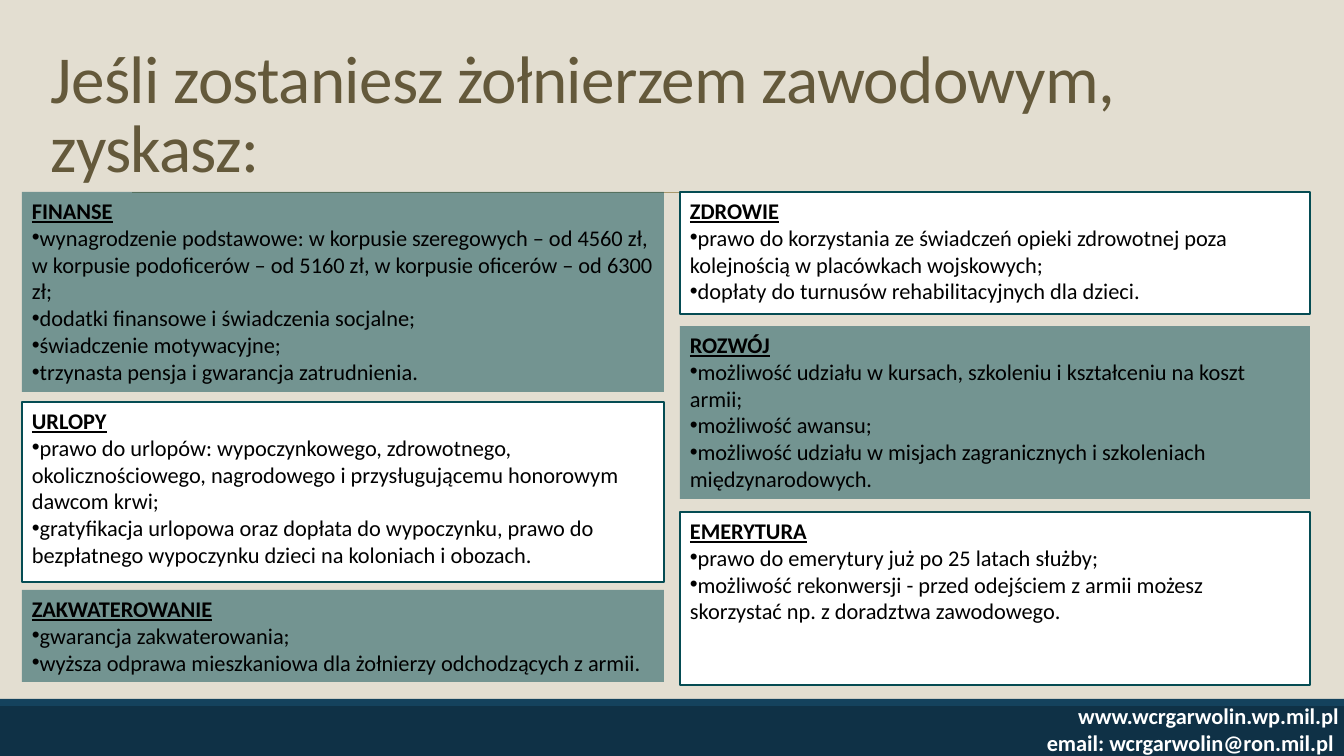
from dataclasses import dataclass

import lxml.etree
import pptx
import pptx.dml.color
import pptx.enum.shapes
import pptx.enum.text
import pptx.oxml.ns
import pptx.util

ALIGN = pptx.enum.text.PP_ALIGN
ANCHOR = pptx.enum.text.MSO_ANCHOR


@dataclass(frozen=True)
class Theme:
    font: str = "Calibri"
    background: str = "E3DED1"
    footer: str = "0F3146"
    stripe: str = "14425D"
    rule: str = "A8986C"
    title: str = "64593B"
    accent: str = "054C53"
    white: str = "FFFFFF"
    black: str = "000000"
    title_size: int = 48
    body_size: int = 16


def px(length):
    return pptx.util.Inches(length / 100.8)


def rgb(color):
    return pptx.dml.color.RGBColor.from_string(color)


def add_element(parent, tag, **attributes):
    return lxml.etree.SubElement(parent, pptx.oxml.ns.qn(tag), attributes)


class Page:
    def __init__(self, deck, theme):
        self.theme = theme
        self.slide = deck.slides.add_slide(deck.slide_layouts[6])
        fill = self.slide.background.fill
        fill.solid()
        fill.fore_color.rgb = rgb(theme.background)

    def rectangle(self, left, top, width, height, color, opacity=100, border=None):
        shape = self.slide.shapes.add_shape(
            pptx.enum.shapes.MSO_SHAPE.RECTANGLE, px(left), px(top), px(width), px(height))
        shape.shadow.inherit = False
        shape.fill.solid()
        shape.fill.fore_color.rgb = rgb(color)
        if opacity < 100:
            tint = shape.fill._xPr.find(".//" + pptx.oxml.ns.qn("a:srgbClr"))
            add_element(tint, "a:alpha", val=str(opacity * 1000))
        if border:
            shape.line.color.rgb = rgb(border)
            shape.line.width = pptx.util.Pt(1.25)
        else:
            shape.line.fill.background()
        return shape

    def line(self, start, end, color, width):
        connector = self.slide.shapes.add_connector(
            pptx.enum.shapes.MSO_CONNECTOR.STRAIGHT, *map(px, start + end))
        connector.line.color.rgb = rgb(color)
        connector.line.width = pptx.util.Pt(width)
        add_element(connector._element.spPr, "a:effectLst")

    def style(self, para, size, color, bold=False, underline=False):
        for span in para.runs:
            font = span.font
            font.name = self.theme.font
            font.size = pptx.util.Pt(size)
            font.color.rgb = rgb(color)
            font.bold, font.underline = bold, underline

    def text(self, left, top, width, height, words, size, color, align=ALIGN.LEFT,
             anchor=ANCHOR.TOP, bold=False):
        box = self.slide.shapes.add_textbox(px(left), px(top), px(width), px(height))
        frame = box.text_frame
        frame.word_wrap = True
        frame.vertical_anchor = anchor
        frame.text = words
        for para in frame.paragraphs:
            para.alignment = align
            self.style(para, size, color, bold=bold)
        return frame

    def title(self, left, top, width, height, words):
        frame = self.text(left, top, width, height, words, self.theme.title_size,
                          self.theme.title, anchor=ANCHOR.BOTTOM)
        para = frame.paragraphs[0]
        para.line_spacing = 0.85
        para.runs[0].font._element.set("spc", "-50")

    def panel(self, left, top, width, height, tinted, heading, items):
        theme = self.theme
        if tinted:
            shape = self.rectangle(left, top, width, height, theme.accent, opacity=50)
        else:
            shape = self.rectangle(left, top, width, height, theme.white, border=theme.accent)
        frame = shape.text_frame
        frame.word_wrap = True
        frame.vertical_anchor = ANCHOR.TOP
        frame.text = "\n".join([heading, *items])
        for index, para in enumerate(frame.paragraphs):
            para.alignment = ALIGN.LEFT
            is_heading = index == 0
            if not is_heading:
                properties = para._p.get_or_add_pPr()
                properties.set("marL", "0")
                properties.set("indent", "0")
                add_element(properties, "a:buFont", typeface="Arial")
                add_element(properties, "a:buChar", char="•")
            self.style(para, theme.body_size, theme.black, bold=is_heading, underline=is_heading)


LEFT_COLUMN = (22, 642)
RIGHT_COLUMN = (680, 630)
PANELS = [
    (LEFT_COLUMN, 192, 200, True, "FINANSE", [
        "wynagrodzenie podstawowe: w korpusie szeregowych – od 4560 zł, "
        "w korpusie podoficerów – od 5160 zł, w korpusie oficerów – od 6300 zł;",
        "dodatki finansowe i świadczenia socjalne;",
        "świadczenie motywacyjne;",
        "trzynasta pensja i gwarancja zatrudnienia."]),
    (LEFT_COLUMN, 402, 180, False, "URLOPY", [
        "prawo do urlopów: wypoczynkowego, zdrowotnego, okolicznościowego, "
        "nagrodowego i przysługującemu honorowym dawcom krwi;",
        "gratyfikacja urlopowa oraz dopłata do wypoczynku, prawo do "
        "bezpłatnego wypoczynku dzieci na koloniach i obozach."]),
    (LEFT_COLUMN, 590, 92, True, "ZAKWATEROWANIE", [
        "gwarancja zakwaterowania;",
        "wyższa odprawa mieszkaniowa dla żołnierzy odchodzących z armii."]),
    (RIGHT_COLUMN, 192, 122, False, "ZDROWIE", [
        "prawo do korzystania ze świadczeń opieki zdrowotnej poza "
        "kolejnością w placówkach wojskowych;",
        "dopłaty do turnusów rehabilitacyjnych dla dzieci."]),
    (RIGHT_COLUMN, 326, 173, True, "ROZWÓJ", [
        "możliwość udziału w kursach, szkoleniu i kształceniu na koszt armii;",
        "możliwość awansu;",
        "możliwość udziału w misjach zagranicznych i szkoleniach międzynarodowych."]),
    (RIGHT_COLUMN, 512, 173, False, "EMERYTURA", [
        "prawo do emerytury już po 25 latach służby;",
        "możliwość rekonwersji - przed odejściem z armii możesz "
        "skorzystać np. z doradztwa zawodowego."]),
]


def main():
    deck = pptx.Presentation()
    deck.slide_width, deck.slide_height = px(1344), px(756)
    theme = Theme()
    page = Page(deck, theme)

    page.rectangle(0, 706, 1344, 50, theme.footer)
    page.rectangle(0, 699, 1344, 7, theme.stripe)
    page.line((132, 192), (1231, 192), theme.rule, 0.5)

    contact = page.text(570, 697, 774, 59,
                        "www.wcrgarwolin.wp.mil.pl\vemail: wcrgarwolin@ron.mil.pl ",
                        theme.body_size, theme.white, align=ALIGN.RIGHT, bold=True)
    contact.margin_right = px(5)

    page.title(41, 31, 1269, 160, "Jeśli zostaniesz żołnierzem zawodowym, zyskasz:")
    for (left, width), top, height, tinted, heading, items in PANELS:
        page.panel(left, top, width, height, tinted, heading, items)

    deck.save("out.pptx")


if __name__ == "__main__":
    main()
